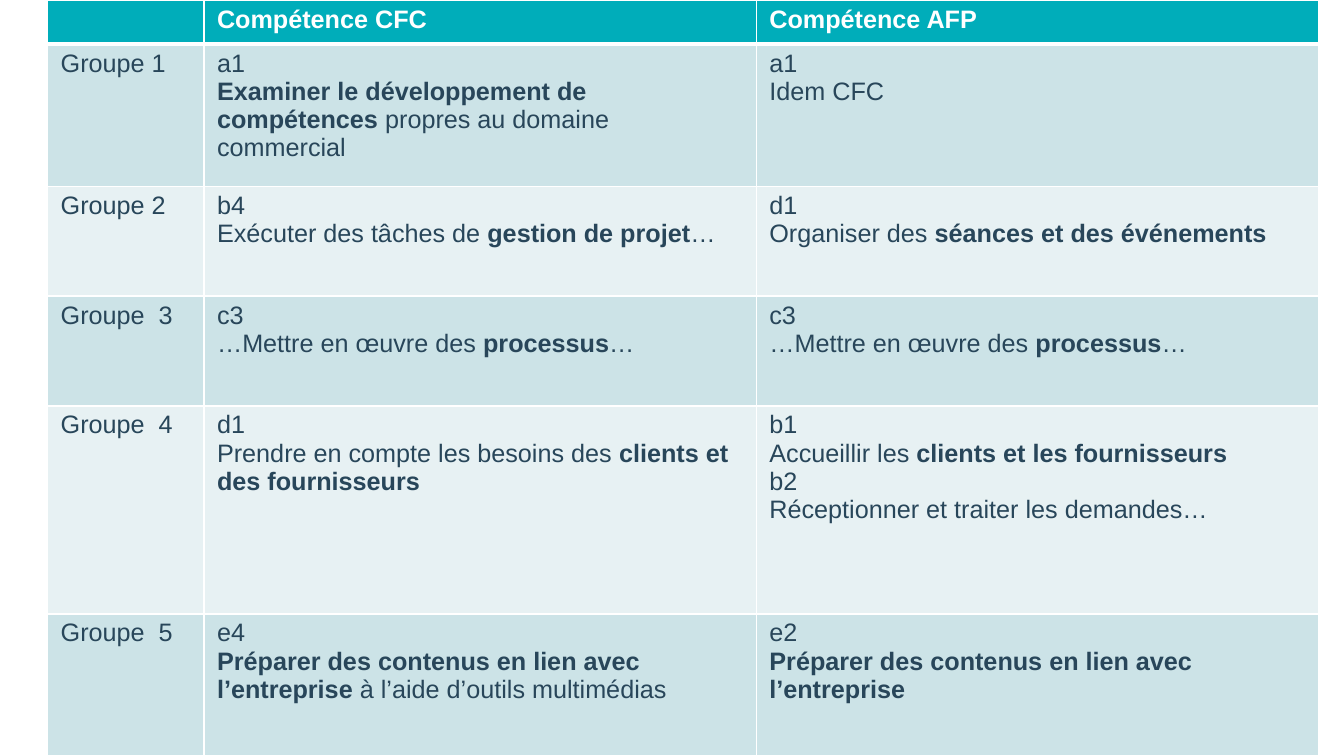
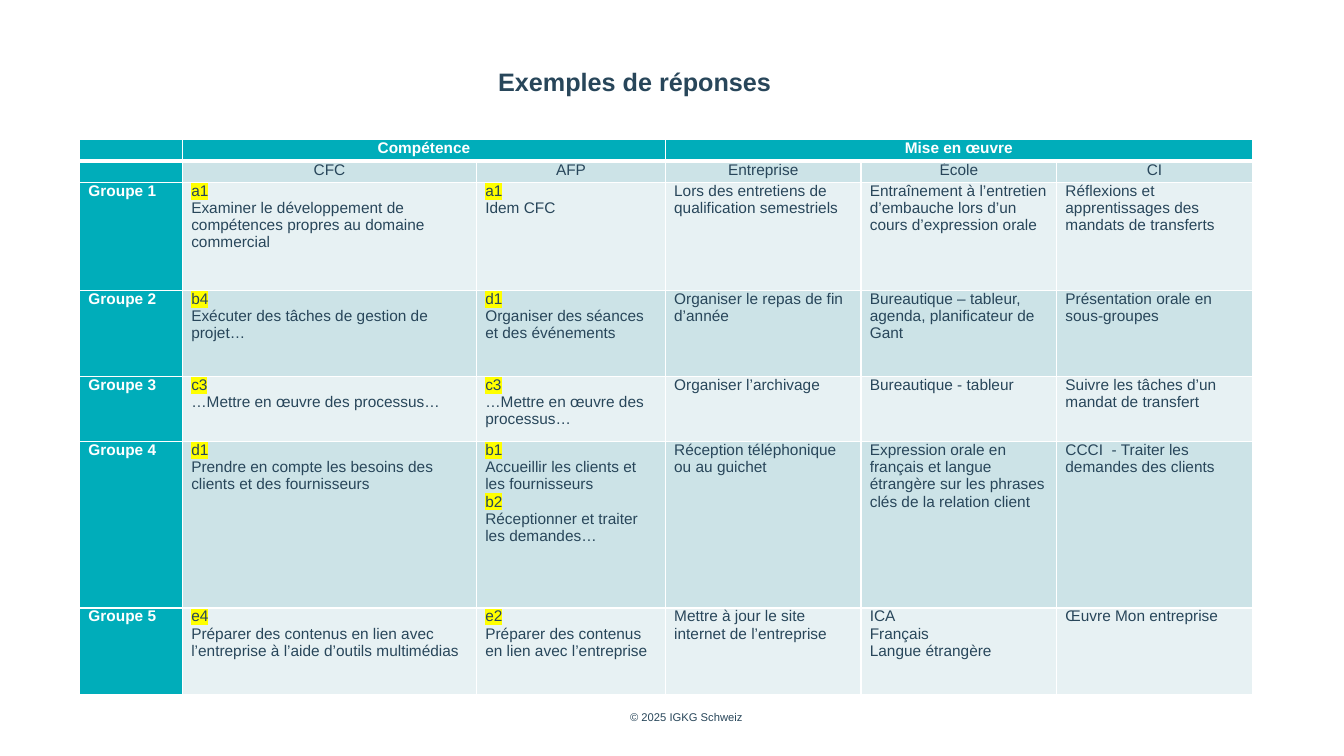
"""Build two slides comparing CFC and AFP competences by group."""
from dataclasses import dataclass

from lxml.etree import SubElement
from pptx import Presentation
from pptx.dml.color import RGBColor
from pptx.enum.text import PP_ALIGN as Align
from pptx.oxml.ns import qn
from pptx.util import Cm, Pt

FONT = "Arial"
TEAL, DARK_BAND, LIGHT_BAND = "00ADBA", "CCE3E7", "E7F1F3"
INK, WHITE, YELLOW = "28465A", "FFFFFF", "FFFF00"

GROUPS = ["Groupe 1", "Groupe 2", "Groupe  3", "Groupe  4", "Groupe  5"]

COMPETENCES = [
    ([("a1", "*Examiner le développement de compétences* propres au domaine commercial")],
     [("a1", "Idem CFC")]),
    ([("b4", "Exécuter des tâches de *gestion de projet*…")],
     [("d1", "Organiser des *séances et des événements*")]),
    ([("c3", "…Mettre en œuvre des *processus*…")],
     [("c3", "…Mettre en œuvre des *processus*…")]),
    ([("d1", "Prendre en compte les besoins des *clients et des fournisseurs*")],
     [("b1", "Accueillir les *clients et les fournisseurs*"),
      ("b2", "Réceptionner et traiter les demandes…")]),
    ([("e4", "*Préparer des contenus en lien avec l’entreprise* à l’aide d’outils multimédias")],
     [("e2", "*Préparer des contenus en lien avec l’entreprise*")]),
]

MISE_EN_OEUVRE = [
    ("Lors des entretiens de qualification semestriels",
     "Entraînement à l’entretien d’embauche lors d’un cours d’expression orale",
     "Réflexions et apprentissages des mandats de transferts"),
    ("Organiser le repas de fin d’année",
     "Bureautique – tableur, agenda, planificateur de Gant",
     "Présentation orale en sous-groupes"),
    ("Organiser l’archivage", "Bureautique - tableur",
     "Suivre les tâches d’un mandat de transfert"),
    ("Réception téléphonique ou au guichet",
     "Expression orale en français et langue étrangère sur les phrases clés "
     "de la relation client",
     "CCCI  - Traiter les demandes des clients"),
    ("Mettre à jour le site internet de l’entreprise",
     "ICA\nFrançais\nLangue étrangère", "Œuvre Mon entreprise"),
]

COMPETENCE_HEADER = ["", "Compétence CFC", "Compétence AFP"]
ANSWER_HEADERS = [
    ["", "Compétence", "", "Mise en œuvre", "", ""],
    ["", "CFC", "AFP", "Entreprise", "École", "CI"],
]


@dataclass
class TableStyle:
    """Hold what differs from one table to the other."""
    size: float
    margins: tuple
    centred_rows: int = 0
    teal_labels: bool = False
    highlight: bool = False


def colour(value):
    """Turn a hex string into a colour."""
    return RGBColor.from_string(value)


def add_run(paragraph, text, size, ink=INK, bold=False, highlight=None):
    """Add one formatted run."""
    run = paragraph.add_run()
    run.text = text
    run.font.size = Pt(size)
    run.font.bold = bold
    run.font.color.rgb = colour(ink)
    if highlight:
        mark = SubElement(run.font._element, qn("a:highlight"))
        SubElement(mark, qn("a:srgbClr"), val=highlight)
    run.font.name = FONT


def add_text(slide, box, text, size, bold=False, margins=(0, 0)):
    """Add one centred line of text."""
    frame = slide.shapes.add_textbox(*map(Cm, box)).text_frame
    frame.word_wrap = True
    frame.margin_left = frame.margin_right = Cm(margins[0])
    frame.margin_top = frame.margin_bottom = Cm(margins[1])
    frame.paragraphs[0].alignment = Align.CENTER
    add_run(frame.paragraphs[0], text, size, bold=bold)


def add_borders(cell, row):
    """Draw white cell borders, thicker below the first row."""
    properties = cell._tc.get_or_add_tcPr()
    heavy = {0: "lnB", 1: "lnT"}.get(row)
    for side in ("lnL", "lnR", "lnT", "lnB"):
        width = Pt(3 if side == heavy else 1)
        line = SubElement(properties, qn(f"a:{side}"), w=str(width))
        fill = SubElement(line, qn("a:solidFill"))
        SubElement(fill, qn("a:srgbClr"), val=WHITE)


def fill_cell(cell, text, row, column, style):
    """Write and colour one cell; text between stars is emphasised."""
    header = row == 0 or (style.teal_labels and column == 0)
    add_borders(cell, row)
    cell.fill.solid()
    cell.fill.fore_color.rgb = colour(
        TEAL if header else DARK_BAND if row % 2 else LIGHT_BAND)
    cell.margin_left = cell.margin_right = Cm(style.margins[0])
    cell.margin_top = cell.margin_bottom = Cm(style.margins[1])
    frame = cell.text_frame
    for index, line in enumerate(text.split("\n")):
        paragraph = frame.add_paragraph() if index else frame.paragraphs[0]
        if row < style.centred_rows:
            paragraph.alignment = Align.CENTER
        if not line:
            SubElement(paragraph._p, qn("a:endParaRPr"), sz=str(style.size * 100))
        for part, words in enumerate(line.split("*")):
            marked = part % 2 == 1
            if words:
                add_run(paragraph, words, style.size, WHITE if header else INK,
                        header or (marked and not style.highlight),
                        YELLOW if marked and style.highlight else None)


def add_table(slide, origin, widths, heights, rows, style, merges=()):
    """Add a banded table with a teal header."""
    frame = slide.shapes.add_table(len(rows), len(widths), *map(Cm, origin),
                                   Cm(sum(widths)), Cm(sum(heights)))
    table = frame.table
    table.horz_banding = False
    for column, width in zip(table.columns, widths):
        column.width = Cm(width)
    for row, height in zip(table.rows, heights):
        row.height = Cm(height)
    for row, texts in enumerate(rows):
        for column, text in enumerate(texts):
            fill_cell(table.cell(row, column), text, row, column, style)
    for first, last in merges:
        table.cell(0, first).merge(table.cell(0, last))


def bold_keywords(entries):
    """Give codes and descriptions with the keywords marked."""
    return "\n".join(f"{code}\n{text}" for code, text in entries)


def marked_codes(entries):
    """Give codes and descriptions with the codes marked."""
    return "\n".join(f"*{code}*\n{text.replace('*', '')}" for code, text in entries)


def build_competences(slide):
    """Build the full-height table of competences."""
    rows = [COMPETENCE_HEADER]
    for group, pair in zip(GROUPS, COMPETENCES):
        rows.append([group, *map(bold_keywords, pair)])
    add_table(slide, (1.2, 0), [3.94, 13.92, 14.17],
              [1.11, 3.58, 2.77, 2.77, 5.24, 3.58], rows,
              TableStyle(18, (0.33, 0.13)))


def build_answers(slide):
    """Build the table of sample answers with title and footer."""
    rows = list(ANSWER_HEADERS)
    for group, pair, places in zip(GROUPS, COMPETENCES, MISE_EN_OEUVRE):
        label = " ".join(group.split())
        rows.append([label, *map(marked_codes, pair), *places])
    add_text(slide, (15.37, 17.9, 3.86, 0.34), "© 2025 IGKG Schweiz", 8)
    add_table(slide, (2.01, 3.52), [2.59, 7.41, 4.76] + [4.93] * 3,
              [0.54, 0.54, 2.72, 2.17, 1.64, 4.19, 2.18], rows,
              TableStyle(11, (0.22, 0), centred_rows=2, teal_labels=True,
                         highlight=True),
              merges=[(1, 2), (3, 5)])
    add_text(slide, (9.2, 1.53, 13.59, 1.02), "Exemples de réponses", 18,
             bold=True, margins=(0.25, 0.13))


def main():
    """Build and save the presentation."""
    presentation = Presentation()
    presentation.slide_width, presentation.slide_height = Cm(33.87), Cm(19.05)
    for build in (build_competences, build_answers):
        build(presentation.slides.add_slide(presentation.slide_layouts[6]))
    presentation.save("out.pptx")


if __name__ == "__main__":
    main()
